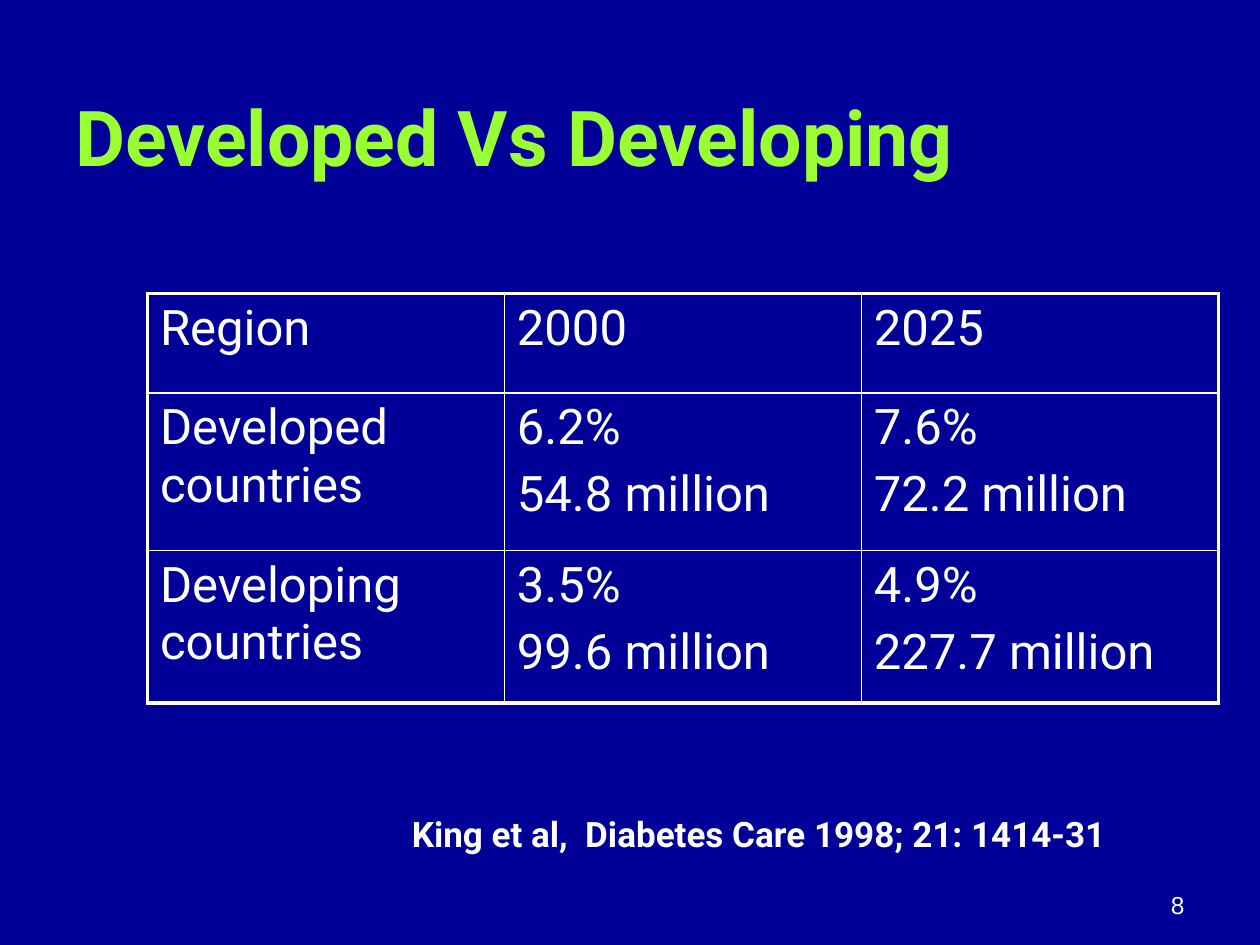
import pptx
import pptx.util
import pptx.dml.color
import pptx.enum.text
import pptx.oxml.ns
from lxml import etree

Inches = pptx.util.Inches
Pt = pptx.util.Pt
Anchor = pptx.enum.text.MSO_ANCHOR
Align = pptx.enum.text.PP_ALIGN
qn = pptx.oxml.ns.qn

COLORS = {"background": "000099", "title": "99FF33", "text": "FFFFFF"}


def format_paragraph(paragraph, size, color="text", bold=False, font="Roboto"):
    for run in paragraph.runs:
        run.font.name = font
        run.font.size = Pt(size)
        run.font.bold = bold
        run.font.color.rgb = pptx.dml.color.RGBColor.from_string(COLORS[color])


def add_border(cell, side, width):
    properties = cell._tc.get_or_add_tcPr()
    line = etree.SubElement(properties, qn(f"a:ln{side}"), w=str(Pt(width)))
    fill = etree.SubElement(line, qn("a:solidFill"))
    etree.SubElement(fill, qn("a:srgbClr"), val=COLORS["text"])


presentation = pptx.Presentation()
presentation.slide_width = Inches(10)
presentation.slide_height = Inches(7.5)
slide = presentation.slides.add_slide(presentation.slide_layouts[6])
slide.background.fill.solid()
slide.background.fill.fore_color.rgb = pptx.dml.color.RGBColor.from_string(COLORS["background"])

# Title, citation and slide number
text_boxes = [
    ("Developed Vs Developing", (0.5, 0.32, 9, 1.51), Anchor.MIDDLE, Align.LEFT,
     dict(size=44, color="title", bold=True)),
    ("King et al,  Diabetes Care 1998; 21: 1414-31", (3.17, 6.4, 6.5, 0.43), Anchor.TOP, Align.LEFT,
     dict(size=20, bold=True)),
    ("8", (7.17, 6.83, 2.33, 0.52), Anchor.BOTTOM, Align.RIGHT,
     dict(size=14, font="Arial")),
]
for text, position, anchor, alignment, style in text_boxes:
    text_frame = slide.shapes.add_textbox(*map(Inches, position)).text_frame
    text_frame.word_wrap = True
    text_frame.vertical_anchor = anchor
    text_frame.text = text
    paragraph = text_frame.paragraphs[0]
    paragraph.alignment = alignment
    format_paragraph(paragraph, **style)

# Prevalence table
rows = [
    ["Region", "2000", "2025"],
    ["Developed countries", "6.2%\n54.8 million", "7.6%\n72.2 million"],
    ["Developing countries", "3.5%\n99.6 million", "4.9%\n227.7 million"],
]
row_heights = [0.79, 1.25, 1.21]
last = len(rows) - 1
table = slide.shapes.add_table(
    len(rows), len(rows[0]), Inches(1.17), Inches(2.33), Inches(8.5), Inches(sum(row_heights))
).table
table.first_row = False
table.horz_banding = False
for column in table.columns:
    column.width = Inches(8.5 / 3)

for row_index, (values, height) in enumerate(zip(rows, row_heights)):
    table.rows[row_index].height = Inches(height)
    for column_index, value in enumerate(values):
        cell = table.cell(row_index, column_index)
        cell.text_frame.text = value
        for paragraph_index, paragraph in enumerate(cell.text_frame.paragraphs):
            if paragraph_index:
                paragraph.space_before = Pt(5.6)
            format_paragraph(paragraph, 28)

        # The outer frame is thicker than the inner grid
        outer_edges = {"L": column_index == 0, "R": column_index == last,
                       "T": row_index == 0, "B": row_index == last}
        for side, is_outer in outer_edges.items():
            add_border(cell, side, 2.25 if is_outer else 1)
        cell.fill.background()

presentation.save("out.pptx")
